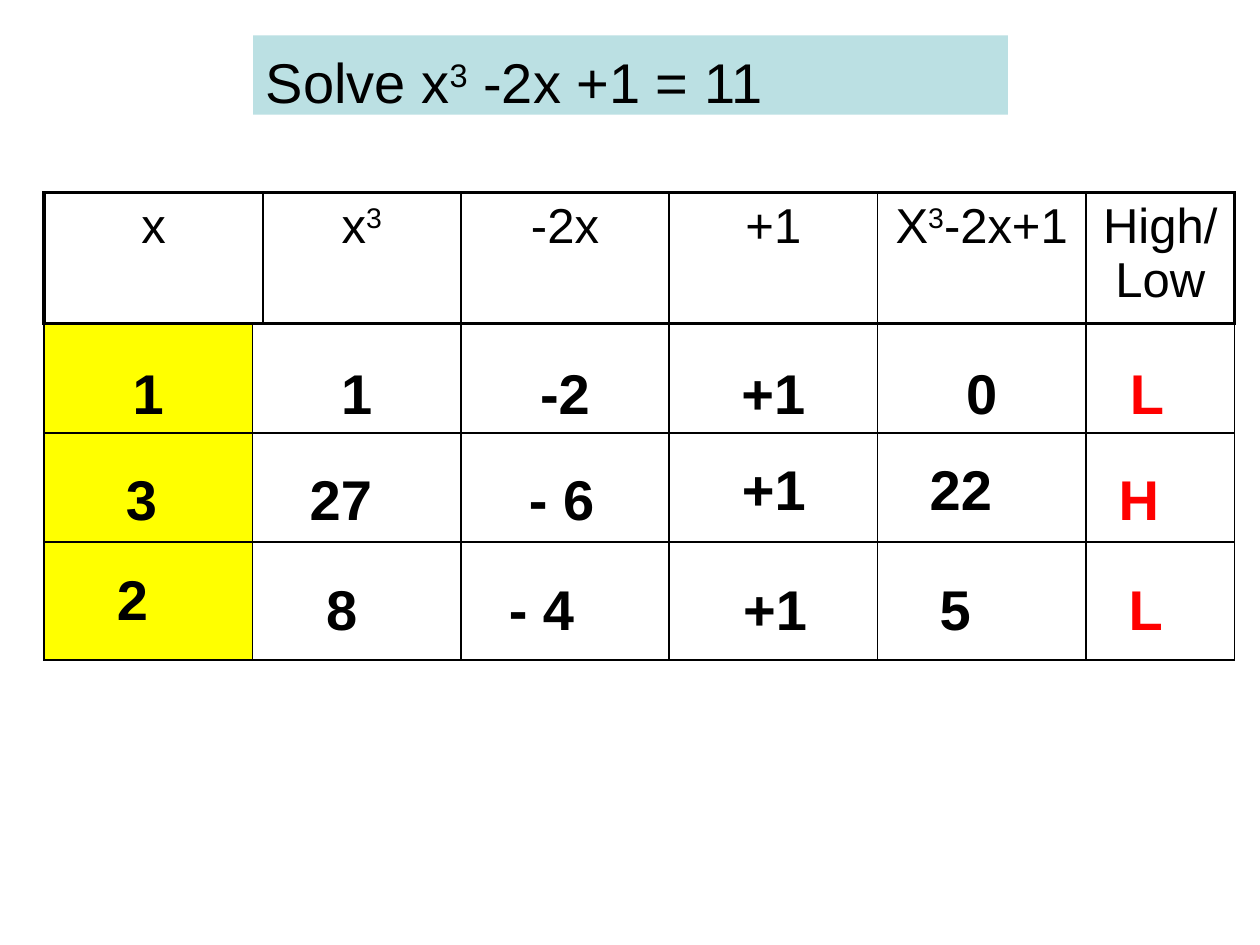
from lxml.etree import SubElement
from pptx import Presentation
from pptx.dml.color import RGBColor
from pptx.enum.text import MSO_ANCHOR, MSO_AUTO_SIZE, PP_ALIGN
from pptx.oxml.ns import qn
from pptx.util import Emu, Inches, Pt

COLORS = {name: RGBColor.from_string(value) for name, value in {
    "ink": "000000", "banner": "BBE0E3", "guess": "FFFF00", "verdict": "FF0000",
}.items()}
FONT = "Arial"
GRID_UNIT = 9.45 / 40
COLUMNS = [7, 7, 7, 7, 7, 5]
HEADER_COLUMNS = [7.35, 6.65, 7, 7, 7, 5]
TABLE_LEFT = 0.35
ANSWER_HEIGHT = 0.63
THIN, THICK = 1, 2.25


def style(paragraph, size, bold=False, color="ink"):
    font = paragraph.font
    font.name, font.size, font.bold = FONT, Pt(size), bold
    font.color.rgb = COLORS[color]


def add_formula(paragraph, parts):
    """Write the parts in turn; every second one is an exponent."""
    for index, part in enumerate(parts):
        run = paragraph.add_run()
        run.text = part
        if index % 2:
            run.font._element.set("baseline", "30000")


def set_borders(cell, widths):
    """Draw left, right, top and bottom borders, with widths in points."""
    properties = cell._tc.get_or_add_tcPr()
    for position, (side, width) in enumerate(zip("LRTB", widths)):
        line = properties.makeelement(qn(f"a:ln{side}"), {"w": str(Pt(width))})
        fill = SubElement(line, qn("a:solidFill"))
        SubElement(fill, qn("a:srgbClr"), val=str(COLORS["ink"]))
        properties.insert(position, line)


def add_grid(slide, top, height, rows, columns):
    """Add a plain table with equal rows and columns in grid units."""
    table = slide.shapes.add_table(
        rows, len(columns), Inches(TABLE_LEFT), Inches(top),
        Inches(GRID_UNIT * sum(columns)), Inches(height)).table
    table.first_row = table.horz_banding = False
    for column, units in zip(table.columns, columns):
        column.width = Inches(GRID_UNIT * units)
    for row in table.rows:
        row.height = Emu(int(Inches(height) / rows))
    for cell in table.iter_cells():
        cell.fill.background()
    return table


def add_title(slide, left, top, width, height):
    title = slide.shapes.title
    title.left, title.top, title.width, title.height = map(
        Inches, (left, top, width, height))
    title.fill.solid()
    title.fill.fore_color.rgb = COLORS["banner"]
    frame = title.text_frame
    frame.auto_size = MSO_AUTO_SIZE.NONE
    frame.vertical_anchor = MSO_ANCHOR.TOP
    frame.margin_top, frame.margin_bottom = Inches(0.1), 0
    paragraph = frame.paragraphs[0]
    paragraph.alignment = PP_ALIGN.LEFT
    style(paragraph, 32)
    add_formula(paragraph, ["Solve x", "3", " -2x +1 = 11"])


def add_header(slide, top, height):
    table = add_grid(slide, top, height, 1, HEADER_COLUMNS)
    headings = [["x"], ["x", "3"], ["-2x"], ["+1"], ["X", "3", "-2x+1"], ["High/Low"]]
    last = len(headings) - 1
    for index, parts in enumerate(headings):
        cell = table.cell(0, index)
        paragraph = cell.text_frame.paragraphs[0]
        paragraph.alignment = PP_ALIGN.CENTER
        style(paragraph, 28)
        add_formula(paragraph, parts)
        set_borders(cell, (THICK if index == 0 else THIN,
                           THICK if index == last else THIN, THICK, THICK))


def add_trials(slide, top, height, rows, first_trial=()):
    """Add trial rows with a marked guess column; fill the first if given."""
    table = add_grid(slide, top, height, rows, COLUMNS)
    for cell in table.iter_cells():
        set_borders(cell, [THIN] * 4)
    for row in range(rows):
        guess = table.cell(row, 0)
        guess.fill.solid()
        guess.fill.fore_color.rgb = COLORS["guess"]
    for index, text in enumerate(first_trial):
        cell = table.cell(0, index)
        cell.text = text
        cell.vertical_anchor = MSO_ANCHOR.BOTTOM
        paragraph = cell.text_frame.paragraphs[0]
        is_verdict = index == len(COLUMNS) - 1
        paragraph.alignment = PP_ALIGN.LEFT if is_verdict else PP_ALIGN.CENTER
        style(paragraph, 32, True, "verdict" if is_verdict else "ink")
        if is_verdict:
            cell.margin_left = Inches(0.35)


def add_answers(slide, answers):
    """Lay the worked answers over the empty trial cells."""
    for text, left, top in answers:
        box = slide.shapes.add_textbox(
            Inches(left), Inches(top), Inches(0.9), Inches(ANSWER_HEIGHT))
        frame = box.text_frame
        frame.word_wrap = True
        frame.margin_top, frame.margin_bottom = Inches(0.1), 0
        paragraph = frame.paragraphs[0]
        paragraph.text = text
        style(paragraph, 32, True, "verdict" if text in "HL" else "ink")


def main():
    presentation = Presentation()
    presentation.slide_width, presentation.slide_height = Inches(10), Inches(7.5)
    slide = presentation.slides.add_slide(presentation.slide_layouts[5])

    add_title(slide, 2.01, 0.28, 5.99, 0.63)
    add_header(slide, 1.53, 1.04)

    # First and second trials
    add_trials(slide, 2.57, 1.73, 2, ["1", "1", "-2", "+1", "0", "L"])
    add_answers(slide, [
        ("3", 0.9, 3.59), ("27", 2.36, 3.59), ("- 6", 4.1, 3.59),
        ("+1", 5.79, 3.51), ("22", 7.28, 3.51), ("H", 8.78, 3.59)])

    # Third trial
    add_trials(slide, 4.3, 0.94, 1)
    add_answers(slide, [
        ("2", 0.83, 4.38), ("8", 2.49, 4.46), ("- 4", 3.94, 4.46),
        ("+1", 5.8, 4.46), ("5", 7.36, 4.46), ("L", 8.86, 4.46)])

    presentation.save("out.pptx")


if __name__ == "__main__":
    main()
